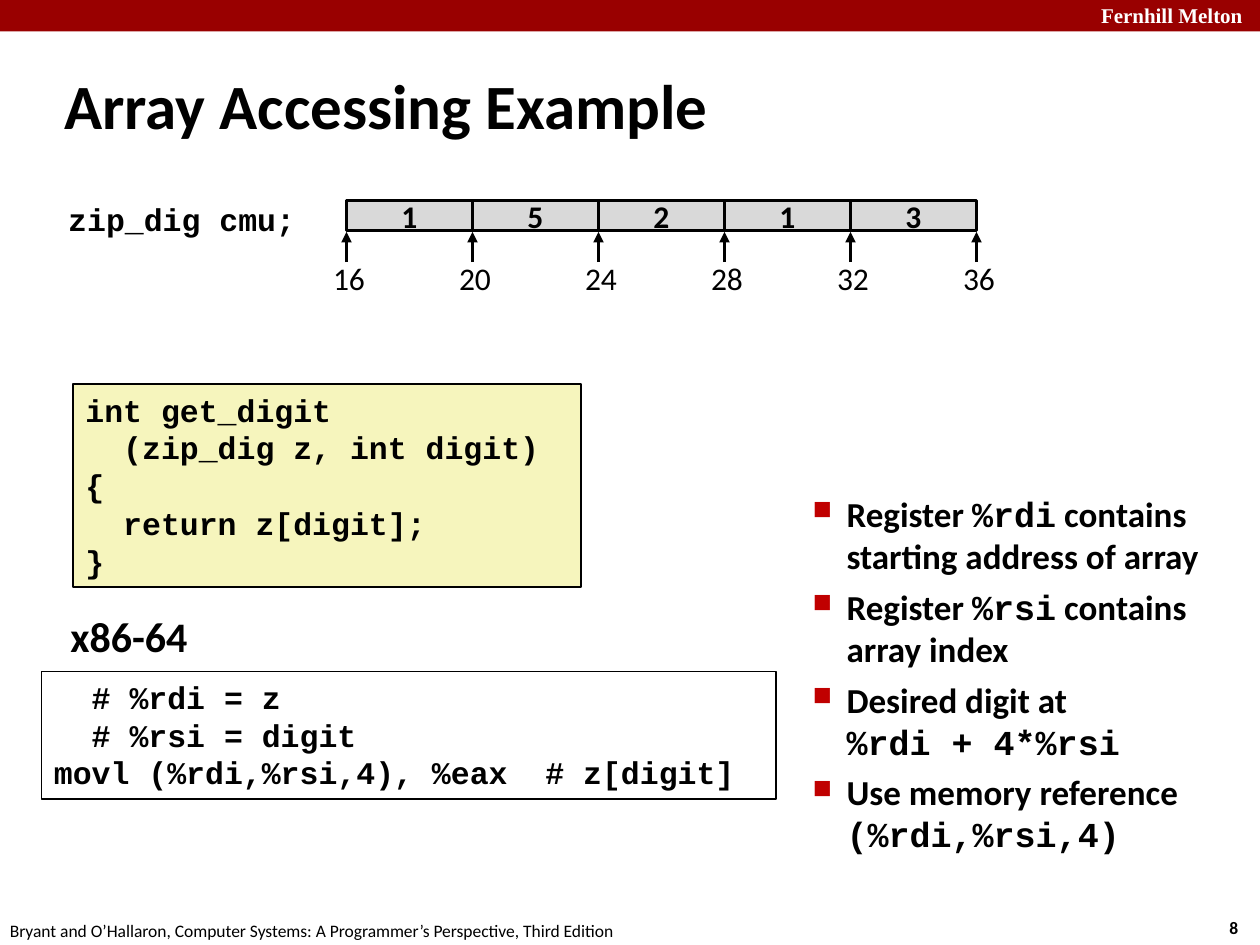
from pptx import Presentation
from pptx.dml.color import RGBColor
from pptx.enum.shapes import MSO_CONNECTOR, MSO_SHAPE
from pptx.enum.text import MSO_ANCHOR, PP_ALIGN
from pptx.oxml import parse_xml
from pptx.oxml.ns import nsdecls
from pptx.util import Inches, Pt

BLACK, WHITE, RED, GRAY = "000000", "FFFFFF", "990000", "D9D9D9"
CREAM, MARK = "F6F5BD", "C00000"
SANS, MONO, SERIF = "Calibri", "Courier New", "Times New Roman"


def color(code):
    return RGBColor.from_string(code)


def node(tag, attrs=""):
    return parse_xml(f"<a:{tag} {nsdecls('a')} {attrs}/>")


class Page:
    def __init__(self, slide):
        self.slide = slide

    def style(self, run, size, font=SANS, bold=True, ink=BLACK):
        run.font.size = Pt(size)
        run.font.name = font
        run.font.bold = bold
        run.font.color.rgb = color(ink)

    def fill_text(self, frame, text, size, align=PP_ALIGN.LEFT, **look):
        frame.text = text
        for para in frame.paragraphs:
            para.alignment = align
            for run in para.runs:
                self.style(run, size, **look)

    def title(self, text, left, top, width, height):
        shape = self.slide.shapes.title
        shape.left, shape.top = Inches(left), Inches(top)
        shape.width, shape.height = Inches(width), Inches(height)
        shape.text_frame.vertical_anchor = MSO_ANCHOR.MIDDLE
        self.fill_text(shape.text_frame, text, 36)

    def frame(self, left, top, width, height, wrap=True):
        box = self.slide.shapes.add_textbox(
            Inches(left), Inches(top), Inches(width), Inches(height))
        box.text_frame.word_wrap = wrap
        return box.text_frame

    def label(self, text, left, top, width, height, size, wrap=False, **look):
        frame = self.frame(left, top, width, height, wrap)
        self.fill_text(frame, text, size, **look)

    def rect(self, left, top, width, height, fill=None, line=None):
        shape = self.slide.shapes.add_shape(
            MSO_SHAPE.RECTANGLE,
            Inches(left), Inches(top), Inches(width), Inches(height))
        shape.shadow.inherit = False
        if fill:
            shape.fill.solid()
            shape.fill.fore_color.rgb = color(fill)
        else:
            shape.fill.background()
        if line:
            shape.line.color.rgb = color(BLACK)
            shape.line.width = Pt(line)
        else:
            shape.line.fill.background()
        return shape

    def code(self, text, left, top, width, height, fill=None):
        frame = self.rect(left, top, width, height, fill, 1).text_frame
        frame.word_wrap = True
        frame.vertical_anchor = MSO_ANCHOR.TOP
        self.fill_text(frame, text, 18, font=MONO)

    def cell(self, text, left, top, width, height):
        frame = self.rect(left, top, width, height, GRAY, 2).text_frame
        frame.word_wrap = False
        frame.vertical_anchor = MSO_ANCHOR.MIDDLE
        self.fill_text(frame, text, 18, PP_ALIGN.CENTER)

    def arrow(self, x, start, end):
        line = self.slide.shapes.add_connector(
            MSO_CONNECTOR.STRAIGHT,
            Inches(x), Inches(start), Inches(x), Inches(end))
        line.line.color.rgb = color(BLACK)
        line.line.width = Pt(2)
        props = line._element.spPr
        props.ln.append(node("tailEnd", 'type="triangle"'))
        props.append(node("effectLst"))

    def bullets(self, items, left, top, width, height):
        """Text between backticks is set in the code font."""
        frame = self.frame(left, top, width, height)
        for i, item in enumerate(items):
            para = frame.add_paragraph() if i else frame.paragraphs[0]
            para.space_before = Pt(5)
            self.bullet(para)
            for j, part in enumerate(item.split("`")):
                for k, text in enumerate(part.split("\n")):
                    if k:
                        para.add_line_break()
                    if text:
                        run = para.add_run()
                        run.text = text
                        self.style(run, 20, MONO if j % 2 else SANS)

    def bullet(self, para):
        props = para._p.get_or_add_pPr()
        props.set("marL", str(Inches(0.44)))
        props.set("indent", str(Inches(-0.27)))
        tint = node("buClr")
        tint.append(node("srgbClr", f'val="{MARK}"'))
        for part in (tint, node("buSzPct", 'val="75000"'),
                     node("buChar", 'char="■"')):
            props.append(part)


def main():
    deck = Presentation()
    deck.slide_width, deck.slide_height = Inches(10), Inches(7.5)
    page = Page(deck.slides.add_slide(deck.slide_layouts[5]))

    # Banner and footer
    page.rect(0, 0, 10, 0.25, RED)
    page.label("Fernhill Melton", 8.64, -0.03, 1.43, 0.3, 12,
               font=SERIF, ink=WHITE)
    page.label("8", 9.66, 7.23, 0.37, 0.27, 10)
    page.label("Bryant and O’Hallaron, Computer Systems: "
               "A Programmer’s Perspective, Third Edition",
               -0.02, 7.25, 5.08, 0.27, 10, bold=False)

    page.title("Array Accessing Example", 0.41, 0.41, 8.3, 0.83)

    # Register notes
    page.bullets(["Register `%rdi` contains starting address of array",
                  "Register `%rsi` contains \narray index",
                  "Desired digit at \n`%rdi + 4*%rsi`",
                  "Use memory reference `(%rdi,%rsi,4)`"],
                 6.18, 3.86, 3.75, 3.26)

    # C source and assembly
    page.code("int get_digit\n  (zip_dig z, int digit)\n{\n"
              "  return z[digit];\n}", 0.58, 3.05, 4.03, 1.61, CREAM)
    page.code("  # %rdi = z\n  # %rsi = digit\n"
              "movl (%rdi,%rsi,4), %eax  # z[digit]", 0.33, 5.33, 5.83, 1.01)
    page.label("x86-64", 0.46, 4.8, 1.17, 0.5, 24)

    # Array cells with byte addresses at their edges
    page.label("zip_dig cmu;", 0.33, 1.54, 2.11, 0.4, 18, wrap=True,
               align=PP_ALIGN.RIGHT, font=MONO)
    left, pitch = 2.75, 1
    digits = "15213"
    for i, digit in enumerate(digits):
        page.cell(digit, left + i * pitch, 1.59, pitch, 0.24)
    for i in range(len(digits) + 1):
        x = left + i * pitch
        page.label(str(16 + 4 * i), x - 0.52, 2.01, 1.08, 0.4, 18, wrap=True,
                   align=PP_ALIGN.CENTER, bold=False)
        page.arrow(x, 2.08, 1.84)

    deck.save("out.pptx")


if __name__ == "__main__":
    main()
